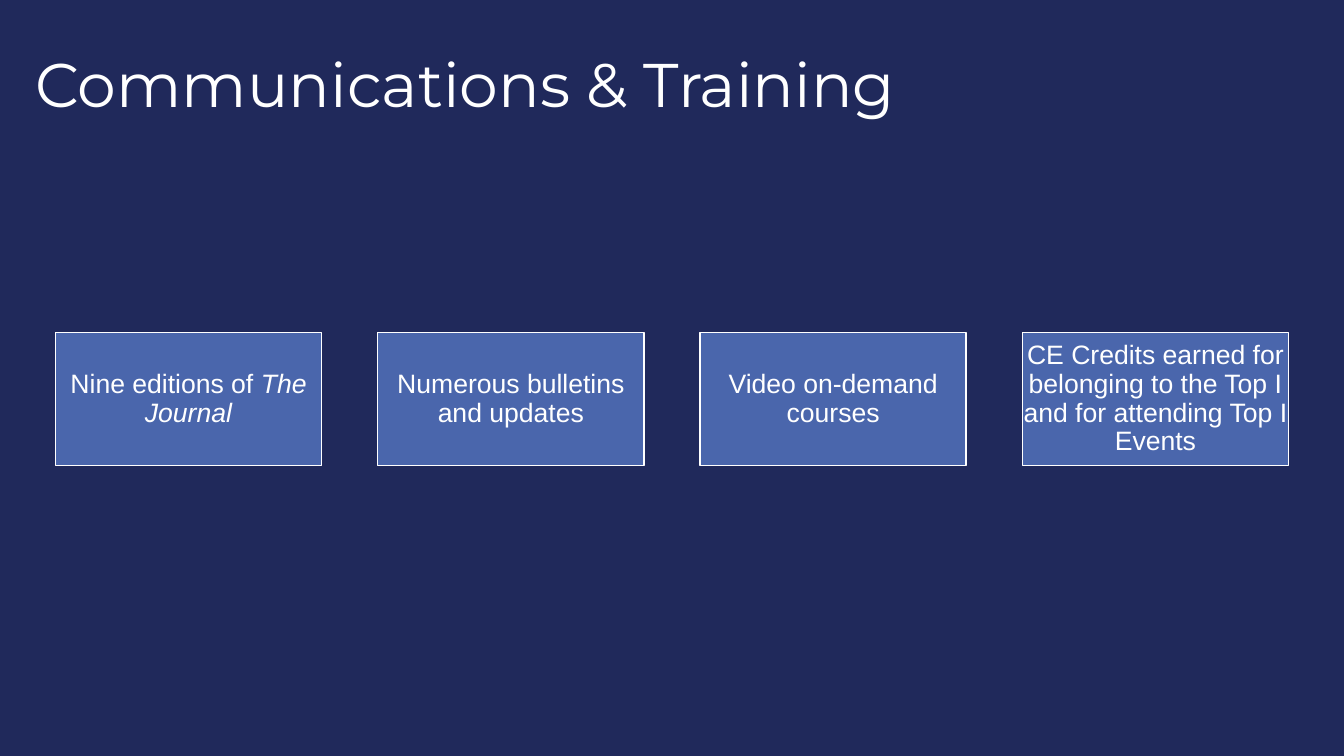
from dataclasses import dataclass

from pptx import Presentation
from pptx.dml.color import RGBColor
from pptx.enum.shapes import MSO_SHAPE as Preset
from pptx.enum.text import MSO_ANCHOR as Anchor, PP_ALIGN as Align
from pptx.slide import Slide
from pptx.util import Inches, Pt

SLIDE_WIDTH, SLIDE_HEIGHT = 13.33, 7.5
NAVY, BLUE, WHITE = "20295B", "4A66AC", "FFFFFF"

MARGIN = 0.55
CARD_TOP = 3.3
CARD_WIDTH = 2.64
CARD_HEIGHT = CARD_WIDTH / 2
CARD_INSET = 0.01
LINE_SPACING = 0.9


@dataclass(frozen=True)
class Phrase:
    text: str
    italic: bool = False


@dataclass(frozen=True)
class Activity:
    phrases: tuple[Phrase, ...]


ACTIVITIES = (
    Activity((Phrase("Nine editions of "), Phrase("The Journal", italic=True))),
    Activity((Phrase("Numerous bulletins and updates"),)),
    Activity((Phrase("Video on-demand courses"),)),
    Activity((Phrase("CE Credits earned for belonging to the Top I and for attending Top I Events"),)),
)


def color(code: str) -> RGBColor:
    return RGBColor.from_string(code)


def write(frame, phrases: tuple[Phrase, ...], font: str, size: float, align: Align) -> None:
    frame.word_wrap = True
    frame.vertical_anchor = Anchor.MIDDLE
    paragraph = frame.paragraphs[0]
    paragraph.alignment = align
    paragraph.line_spacing = LINE_SPACING
    for phrase in phrases:
        run = paragraph.add_run()
        run.text = phrase.text
        run.font.name = font
        run.font.size = Pt(size)
        run.font.italic = phrase.italic
        run.font.color.rgb = color(WHITE)


def draw_heading(slide: Slide, text: str) -> None:
    heading = slide.shapes.add_textbox(Inches(0.25), Inches(0.08), Inches(10.5), Inches(1.57))
    write(heading.text_frame, (Phrase(text),), "Montserrat", 44, Align.LEFT)


def draw_activity(slide: Slide, activity: Activity, left: float) -> None:
    card = slide.shapes.add_shape(
        Preset.RECTANGLE, Inches(left), Inches(CARD_TOP), Inches(CARD_WIDTH), Inches(CARD_HEIGHT)
    )
    card.shadow.inherit = False
    card.fill.solid()
    card.fill.fore_color.rgb = color(BLUE)
    card.line.color.rgb = color(WHITE)
    card.line.width = Pt(1)
    frame = card.text_frame
    frame.margin_left = frame.margin_right = Inches(CARD_INSET)
    frame.margin_top = frame.margin_bottom = Inches(CARD_INSET)
    write(frame, activity.phrases, "Arial", 19, Align.CENTER)


def main() -> None:
    deck = Presentation()
    deck.slide_width, deck.slide_height = Inches(SLIDE_WIDTH), Inches(SLIDE_HEIGHT)
    slide = deck.slides.add_slide(deck.slide_layouts[6])
    slide.background.fill.solid()
    slide.background.fill.fore_color.rgb = color(NAVY)

    draw_heading(slide, "Communications & Training")
    column_step = (SLIDE_WIDTH - 2 * MARGIN - CARD_WIDTH) / (len(ACTIVITIES) - 1)
    for column, activity in enumerate(ACTIVITIES):
        draw_activity(slide, activity, MARGIN + column * column_step)

    deck.save("out.pptx")


if __name__ == "__main__":
    main()
